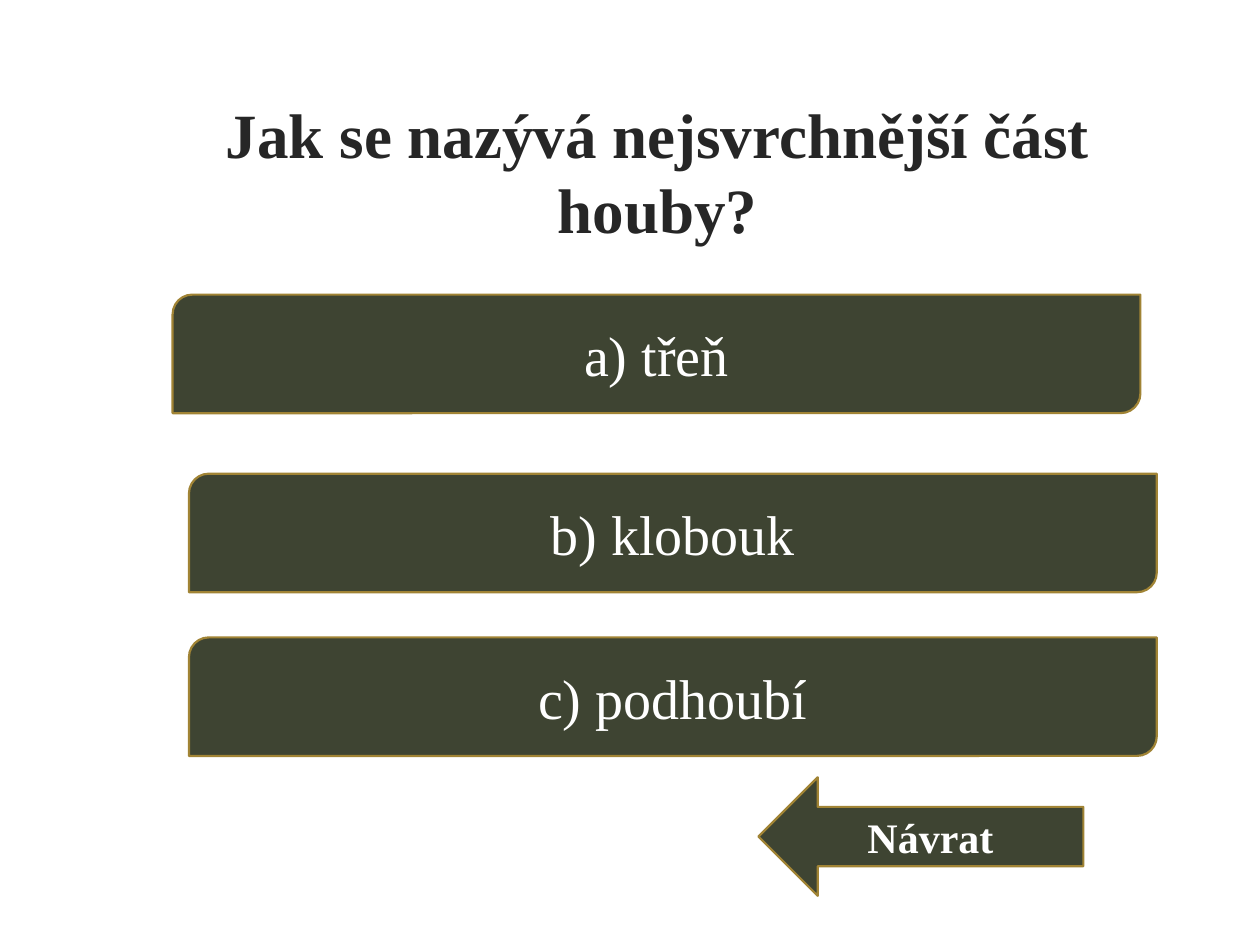
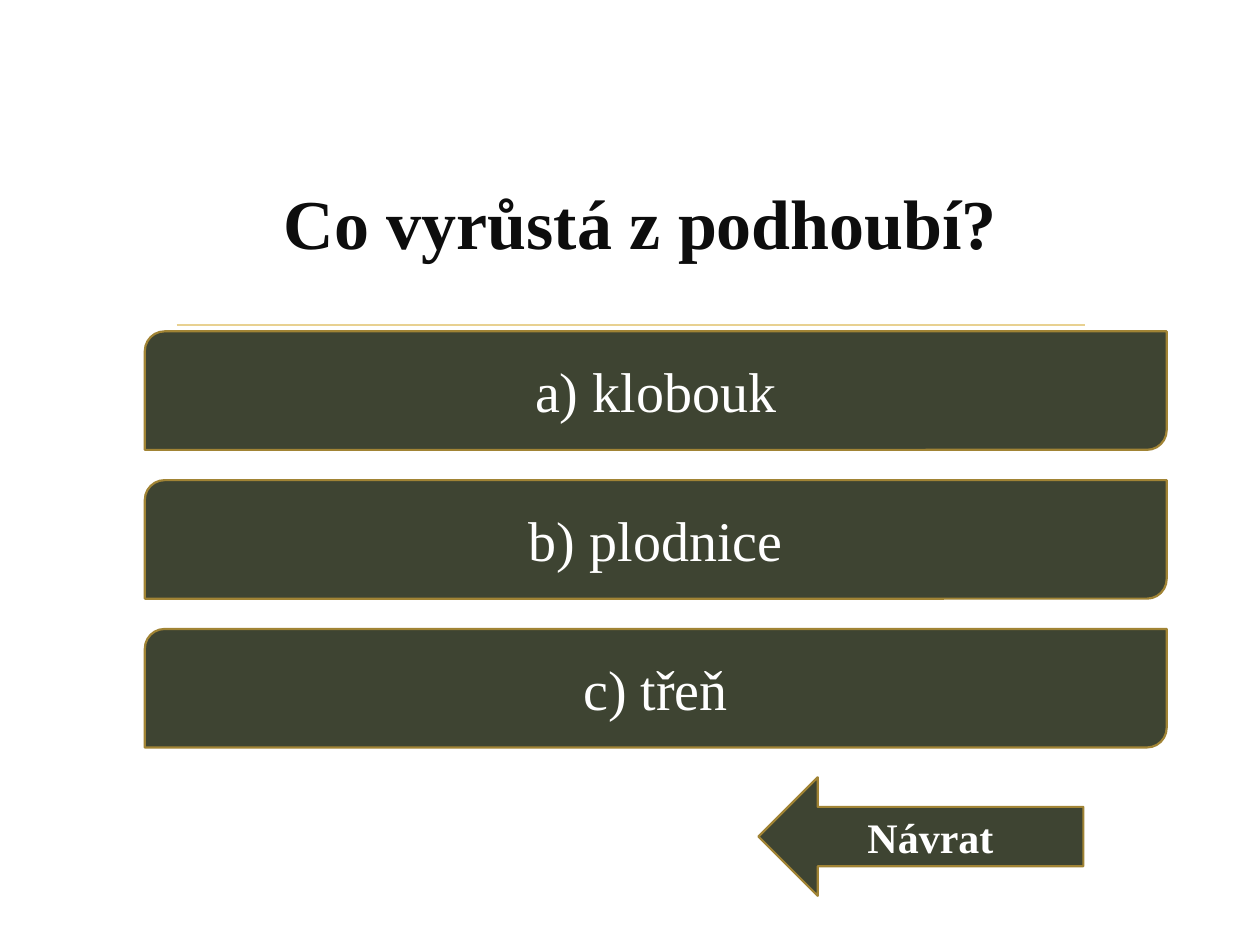
import dataclasses

import lxml.etree
import pptx
import pptx.dml.color
import pptx.enum.shapes
import pptx.enum.text
import pptx.oxml.ns
import pptx.presentation
import pptx.shapes.autoshape
import pptx.slide
import pptx.util

Cm = pptx.util.Cm
Pt = pptx.util.Pt
KIND = pptx.enum.shapes.MSO_SHAPE

FONT = "Times New Roman"
COLOR = {
    "fill": "3E4432",
    "edge": "A18435",
    "rule": "E8D191",
    "text": "FFFFFF",
    "dark": "262626",
    "black": "0D0D0D",
}
EDGE = Pt(1.25)
BAR_H = 2.39


@dataclasses.dataclass(frozen=True)
class Box:
    """Place and size in centimetres."""
    left: float
    top: float
    width: float
    height: float

    def lengths(self) -> list[pptx.util.Length]:
        return [Cm(self.left), Cm(self.top), Cm(self.width), Cm(self.height)]


@dataclasses.dataclass(frozen=True)
class Style:
    size: int
    color: str
    bold: bool = False


@dataclasses.dataclass(frozen=True)
class Answer:
    text: str
    left: float
    top: float


@dataclasses.dataclass(frozen=True)
class Quiz:
    title: str
    box: Box
    style: Style
    width: float
    answers: list[Answer]


BAR = Style(32, "text")
BACK = Style(24, "text", True)
BACK_BOX = Box(15.29, 15.67, 6.55, BAR_H)

QUIZZES = [
    Quiz(
        "Jak se nazývá nejsvrchnější část houby?",
        Box(2.84, 1.85, 20.83, 3.18), Style(36, "dark", True), 19.51,
        [
            Answer("a) třeň", 3.48, 5.94),
            Answer("b) klobouk", 3.81, 9.55),
            Answer("c) podhoubí", 3.81, 12.85),
        ],
    ),
    Quiz(
        "Co vyrůstá z podhoubí? ",
        Box(3.33, 2.69, 19.51, 3.56), Style(40, "black", True), 20.6,
        [
            Answer(text, 2.92, 6.68 + 3 * row)
            for row, text in enumerate(["a) klobouk", "b) plodnice", "c) třeň"])
        ],
    ),
]


def rgb(name: str) -> pptx.dml.color.RGBColor:
    return pptx.dml.color.RGBColor.from_string(COLOR[name])


def write(shape: pptx.shapes.autoshape.Shape, text: str, style: Style) -> None:
    """Put one centred run in a shape or placeholder."""
    frame = shape.text_frame
    frame.word_wrap = True
    frame.auto_size = pptx.enum.text.MSO_AUTO_SIZE.NONE
    frame.vertical_anchor = pptx.enum.text.MSO_ANCHOR.MIDDLE
    para = frame.paragraphs[0]
    para.alignment = pptx.enum.text.PP_ALIGN.CENTER
    run = para.add_run()
    run.text = text
    run.font.name = FONT
    run.font.size = Pt(style.size)
    run.font.bold = style.bold
    run.font.color.rgb = rgb(style.color)


def button(slide: pptx.slide.Slide, kind: KIND, box: Box, text: str, style: Style) -> None:
    shape = slide.shapes.add_shape(kind, *box.lengths())
    shape.shadow.inherit = False
    shape.fill.solid()
    shape.fill.fore_color.rgb = rgb("fill")
    shape.line.color.rgb = rgb("edge")
    shape.line.width = EDGE
    write(shape, text, style)


def add_rule(slide: pptx.slide.Slide) -> None:
    """Draw the title rule and move it to the layout, shared by all slides."""
    line = slide.shapes.add_connector(
        pptx.enum.shapes.MSO_CONNECTOR.STRAIGHT, Cm(3.56), Cm(6.55), Cm(21.87), Cm(6.55))
    line.line.color.rgb = rgb("rule")
    line.line.width = EDGE
    props = line.element.find(pptx.oxml.ns.qn("p:spPr"))
    lxml.etree.SubElement(props, pptx.oxml.ns.qn("a:effectLst"))
    slide.slide_layout.shapes.element.append(line.element)


def add_quiz(deck: pptx.presentation.Presentation, quiz: Quiz) -> pptx.slide.Slide:
    slide = deck.slides.add_slide(deck.slide_layouts.get_by_name("Title Only"))
    # Question
    title = slide.shapes.title
    title.left, title.top, title.width, title.height = quiz.box.lengths()
    write(title, quiz.title, quiz.style)
    # Answers
    for item in quiz.answers:
        box = Box(item.left, item.top, quiz.width, BAR_H)
        button(slide, KIND.ROUND_2_DIAG_RECTANGLE, box, item.text, BAR)
    # Way back
    button(slide, KIND.LEFT_ARROW, BACK_BOX, "Návrat ", BACK)
    return slide


def main() -> None:
    deck = pptx.Presentation()
    deck.slide_width, deck.slide_height = Cm(25.4), Cm(19.05)
    slides = [add_quiz(deck, quiz) for quiz in QUIZZES]
    add_rule(slides[0])
    deck.save("out.pptx")


if __name__ == "__main__":
    main()
